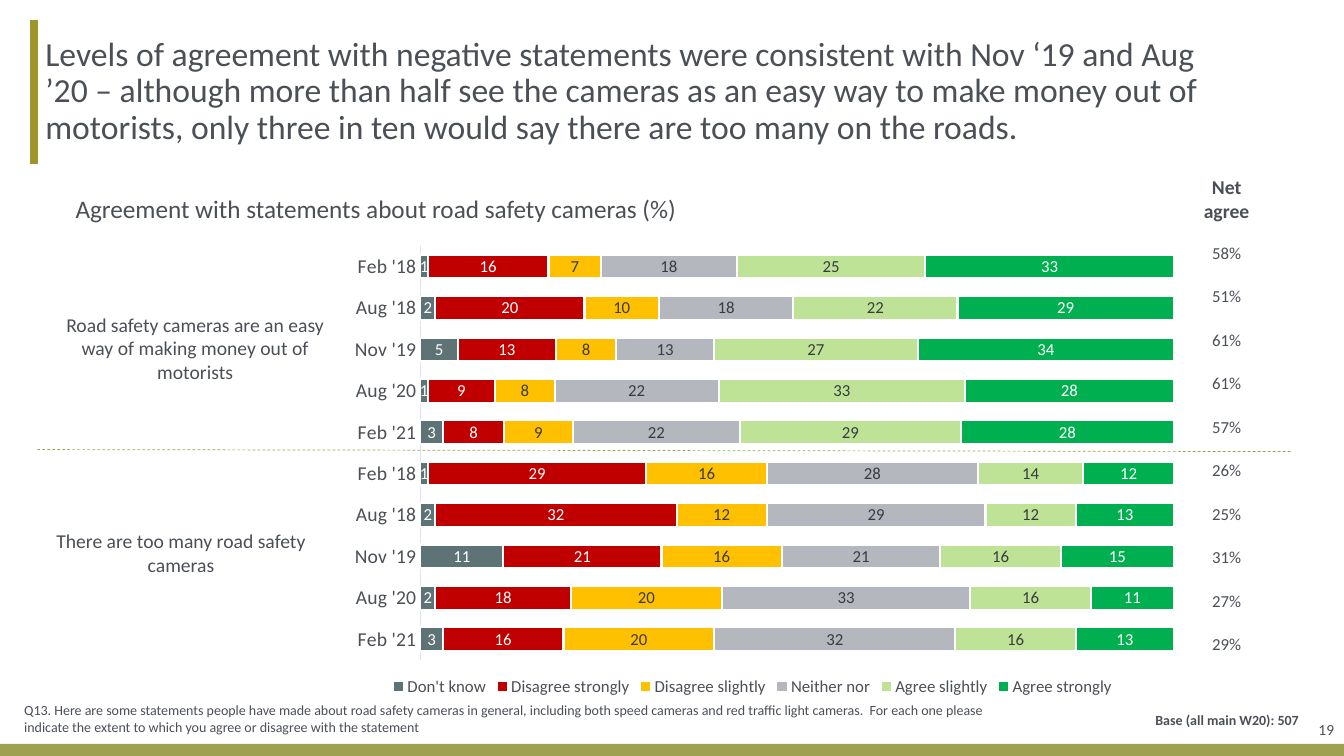
from dataclasses import dataclass

from lxml.etree import SubElement
from pptx import Presentation
from pptx.chart.data import CategoryChartData
from pptx.dml.color import RGBColor
from pptx.enum.chart import XL_CHART_TYPE, XL_LABEL_POSITION, XL_LEGEND_POSITION, XL_TICK_MARK
from pptx.enum.dml import MSO_LINE
from pptx.enum.shapes import MSO_CONNECTOR, MSO_SHAPE
from pptx.enum.text import MSO_ANCHOR, PP_ALIGN
from pptx.oxml import parse_xml
from pptx.oxml.ns import nsdecls, qn
from pptx.util import Inches, Pt


@dataclass(frozen=True)
class Theme:
    """Colours, font and type sizes of the slide."""
    font: str = "Calibri"
    text: str = "4B4F56"
    dark: str = "383B40"
    white: str = "FFFFFF"
    olive: str = "9FA052"
    bar: str = "9F962B"
    axis: str = "E3E4E7"
    title: int = 24
    subtitle: int = 18
    label: int = 14
    value: int = 12
    page: int = 11
    note: int = 10


@dataclass(frozen=True)
class Box:
    """A rectangle whose inner boxes are given in percent of its size."""
    left: int
    top: int
    width: int
    height: int

    def inner(self, left, top, width, height):
        """Return the box at the given percentages of this one."""
        return Box(int(self.left + self.width * left / 100), int(self.top + self.height * top / 100),
                   int(self.width * width / 100), int(self.height * height / 100))

    @property
    def frame(self):
        """Return left, top, width and height."""
        return self.left, self.top, self.width, self.height


THEME = Theme()
STATEMENTS = [
    ("Road safety cameras are an easy way of making money out of motorists", (3.83, 26.14, 21.38, 15.34)),
    ("There are too many road safety cameras", (2.78, 66.86, 21.38, 10.8)),
]
WAVES = ["Feb '18", "Aug '18", "Nov '19", "Aug '20", "Feb '21"]
NET_AGREE = [58, 51, 61, 61, 57, 26, 25, 31, 27, 29]
ANSWERS = [
    ("Don't know", "5E7376", THEME.white, (1, 2, 5, 1, 3, 1, 2, 11, 2, 3)),
    ("Disagree strongly", "C00000", THEME.white, (16, 20, 13, 9, 8, 29, 32, 21, 18, 16)),
    ("Disagree slightly", "FFC000", THEME.dark, (7, 10, 8, 8, 9, 16, 12, 16, 20, 20)),
    ("Neither nor", "B4B8BE", THEME.dark, (18, 18, 13, 22, 22, 28, 29, 21, 33, 32)),
    ("Agree slightly", "BEE396", THEME.dark, (25, 22, 27, 33, 29, 14, 12, 16, 16, 16)),
    ("Agree strongly", "00B050", THEME.white, (33, 29, 34, 28, 28, 12, 13, 15, 11, 13)),
]
PLOT_SHARES = {"x": 0.149, "y": 0.126, "w": 0.796, "h": 0.796}


def style_font(font, size, color=THEME.text, bold=False):
    """Set typeface, size, colour and weight."""
    font.name, font.size, font.bold = THEME.font, Pt(size), bold
    font.color.rgb = RGBColor.from_string(color)


def add_text(slide, box, text, size, align=PP_ALIGN.LEFT, anchor=MSO_ANCHOR.MIDDLE, bold=False, tight=False):
    """Add a one-paragraph text box and return its paragraph."""
    frame = slide.shapes.add_textbox(*box.frame).text_frame
    frame.word_wrap, frame.vertical_anchor = True, anchor
    if tight:
        frame.margin_left = Inches(0.08)
        frame.margin_top = frame.margin_right = frame.margin_bottom = 0
    frame.text = text
    paragraph = frame.paragraphs[0]
    paragraph.alignment = align
    style_font(paragraph.runs[0].font, size, bold=bold)
    return paragraph


def add_line(slide, box, color, width):
    """Draw a line from the top left to the bottom right of the box."""
    connector = slide.shapes.add_connector(MSO_CONNECTOR.STRAIGHT, box.left, box.top,
                                           box.left + box.width, box.top + box.height)
    connector.line.color.rgb = RGBColor.from_string(color)
    connector.line.width = Pt(width)
    SubElement(connector._element.spPr, qn("a:effectLst"))
    return connector


def add_header(slide, box):
    """Place the accent bar and the headline."""
    add_line(slide, box.inner(0, 0, 0, 100), THEME.bar, 6)
    title = add_text(
        slide, box.inner(0.26, 0, 99.74, 100),
        "Levels of agreement with negative statements were consistent with Nov ‘19 and Aug ’20 – although "
        "more than half see the cameras as an easy way to make money out of motorists, only three in ten "
        "would say there are too many on the roads.", THEME.title, tight=True)
    title.line_spacing = 0.9


def add_net_table(slide, box):
    """Place the column of net agreement figures."""
    texts = ["Net agree"] + [f"{value}%" for value in NET_AGREE]
    shape = slide.shapes.add_table(len(texts), 1, *box.frame)
    table = shape.table
    table.first_row = table.horz_banding = False
    header_height = box.inner(0, 0, 100, 12.7).height
    for index, text in enumerate(texts):
        is_header = index == 0
        table.rows[index].height = header_height if is_header else (box.height - header_height) // len(NET_AGREE)
        cell = table.cell(index, 0)
        cell.fill.background()
        cell.vertical_anchor = MSO_ANCHOR.MIDDLE
        cell.text = text
        paragraph = cell.text_frame.paragraphs[0]
        paragraph.alignment = PP_ALIGN.CENTER
        style_font(paragraph.runs[0].font, THEME.label if is_header else THEME.value, bold=is_header)
    style_id = shape._element.find(".//" + qn("a:tableStyleId"))
    style_id.text = "{2D5ABB26-0587-4C30-8999-92F81FD0307C}"


def set_plot_layout(chart):
    """Fix the inner plot area at its shares of the chart."""
    plot_area = chart._chartSpace.chart.plotArea
    for layout in plot_area.findall(qn("c:layout")):
        plot_area.remove(layout)
    modes = "".join(f'<c:{key}Mode val="edge"/>' for key in "xy")
    shares = "".join(f'<c:{key} val="{share}"/>' for key, share in PLOT_SHARES.items())
    plot_area.insert(0, parse_xml(
        f'<c:layout {nsdecls("c")}><c:manualLayout><c:layoutTarget val="inner"/>'
        f'{modes}{shares}</c:manualLayout></c:layout>'))


def add_agreement_chart(slide, box):
    """Place the stacked bars of answers by statement and wave."""
    data = CategoryChartData(number_format="0")
    data.categories = WAVES * len(STATEMENTS)
    for name, _, _, values in ANSWERS:
        data.add_series(name, values)
    chart = slide.shapes.add_chart(XL_CHART_TYPE.BAR_STACKED_100, *box.frame, data).chart
    style_font(chart.font, THEME.note)
    chart.has_title = False
    chart.has_legend = True
    chart.legend.position = XL_LEGEND_POSITION.BOTTOM
    chart.legend.include_in_layout = False
    style_font(chart.legend.font, THEME.value)
    category_axis, value_axis = chart.category_axis, chart.value_axis
    category_axis.reverse_order = True
    category_axis.major_tick_mark = category_axis.minor_tick_mark = XL_TICK_MARK.NONE
    category_axis.format.line.color.rgb = RGBColor.from_string(THEME.axis)
    category_axis.format.line.width = Pt(0.75)
    style_font(category_axis.tick_labels.font, THEME.label)
    value_axis.visible = value_axis.has_major_gridlines = False
    value_axis.minimum_scale, value_axis.maximum_scale = 0, 1
    plot = chart.plots[0]
    plot.gap_width, plot.overlap, plot.vary_by_categories = 75, 100, False
    for series, (_, color, label_color, _) in zip(plot.series, ANSWERS):
        series.format.fill.solid()
        series.format.fill.fore_color.rgb = RGBColor.from_string(color)
        series.format.line.color.rgb = RGBColor.from_string(THEME.white)
        series.format.line.width = Pt(1.5)
        labels = series.data_labels
        labels.show_value, labels.position = True, XL_LABEL_POSITION.CENTER
        labels.number_format, labels.number_format_is_linked = "0", False
        style_font(labels.font, THEME.value, label_color)
    set_plot_layout(chart)


def add_body(slide, box):
    """Place the net figures, chart, subtitle, divider and statements."""
    add_net_table(slide, box.inner(88.15, 0, 6.23, 93.75))
    add_agreement_chart(slide, box.inner(20.78, 2.27, 70.44, 97.73))
    add_text(slide, box.inner(4.88, 3.79, 71.04, 7.58), "Agreement with statements about road safety cameras (%)",
             THEME.subtitle, anchor=MSO_ANCHOR.TOP)
    divider = add_line(slide, box.inner(2.78, 52.84, 93.39, 0.38), THEME.olive, 0.5)
    divider.line.dash_style = MSO_LINE.DASH
    for statement, shares in STATEMENTS:
        add_text(slide, box.inner(*shares), statement, THEME.label, PP_ALIGN.CENTER, MSO_ANCHOR.TOP)


def add_footer(slide, box):
    """Place the bottom band, question, base and page number."""
    band = slide.shapes.add_shape(MSO_SHAPE.RECTANGLE, *box.inner(0, 78.2, 100, 21.8).frame)
    band.shadow.inherit = False
    band.fill.solid()
    band.fill.fore_color.rgb = RGBColor.from_string(THEME.olive)
    band.line.fill.background()
    add_text(slide, box.inner(1.2, 3.6, 74.72, 56.4),
             "Q13. Here are some statements people have made about road safety cameras in general, including both "
             "speed cameras and red traffic light cameras.  For each one please indicate the extent to which you "
             "agree or disagree with the statement", THEME.note, tight=True)
    add_text(slide, box.inner(67.07, 5.5, 29.56, 58), "Base (all main W20): 507", THEME.note,
             PP_ALIGN.RIGHT, bold=True, tight=True)
    add_text(slide, box.inner(93.17, 0, 6.83, 105), "19", THEME.page, PP_ALIGN.RIGHT)


def main():
    """Build and save the slide."""
    presentation = Presentation()
    presentation.slide_width, presentation.slide_height = Inches(13.33), Inches(7.5)
    slide = presentation.slides.add_slide(presentation.slide_layouts[6])
    page = Box(0, 0, presentation.slide_width, presentation.slide_height)
    add_header(slide, page.inner(2.55, 2.67, 87.6, 19))
    add_body(slide, page.inner(0, 22.27, 100, 70.4))
    add_footer(slide, page.inner(0, 92.67, 100, 7.33))
    presentation.save("out.pptx")


if __name__ == "__main__":
    main()
